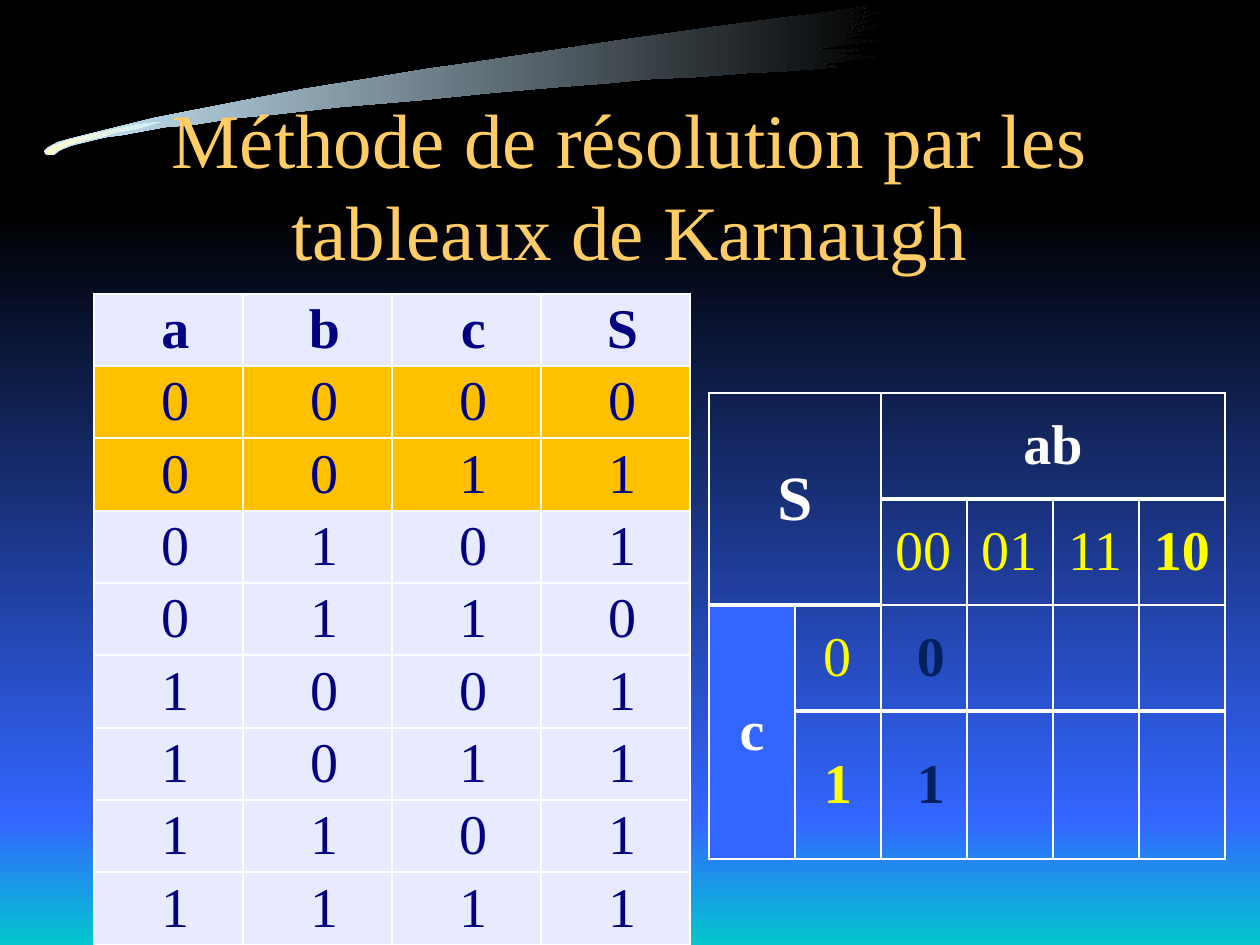
import pptx
import pptx.dml.color
import pptx.enum.shapes
import pptx.enum.text
import pptx.oxml
import pptx.oxml.ns
import pptx.util

PX = 914400 / 126
FONT = "Times New Roman"
WHITE, NAVY, YELLOW, INK = "FFFFFF", "000080", "FFFF00", "002060"
BLUE, LILAC, AMBER = "3366FF", "E8EAFF", "FFC000"

BRUSH = [
    (838, 67), (819, 64), (874, 57), (832, 54), (858, 50), (815, 49), (886, 39),
    (837, 40), (867, 34), (833, 37), (886, 25), (843, 29), (871, 20), (844, 23),
    (883, 11), (848, 15), (869, 6), (845, 10), (815, 14), (774, 19), (707, 28),
    (665, 34), (622, 40), (536, 53), (496, 59), (470, 63), (427, 69), (373, 78),
    (304, 89), (262, 97), (190, 111), (154, 118), (89, 134), (69, 139), (58, 142),
    (48, 147), (45, 150), (44, 151), (45, 154), (48, 155), (54, 155), (59, 151),
    (63, 149), (68, 147), (74, 145), (86, 142), (94, 140), (107, 137), (123, 135),
    (144, 131), (166, 127), (192, 125), (236, 118), (270, 115), (340, 107),
    (422, 100), (490, 93), (558, 87), (610, 83), (651, 79), (697, 77), (748, 73),
    (788, 71),
]
BRUSH_TIP = [
    (45, 150), (49, 149), (53, 146), (57, 145), (66, 141), (81, 137), (108, 131),
    (135, 125), (160, 122), (136, 129), (118, 132), (101, 137), (86, 140),
    (68, 145), (59, 150), (55, 152), (52, 155), (48, 155), (45, 154), (45, 152),
]
TRUTH_ROWS = ["abcS", "0000", "0011", "0101", "0110", "1001", "1011", "1101", "1111"]
KARNAUGH = {
    (0, 0): ("S", 36, WHITE, True),
    (0, 2): ("ab", 32, WHITE, True),
    (1, 2): ("00", 32, YELLOW, False),
    (1, 3): ("01", 32, YELLOW, False),
    (1, 4): ("11", 32, YELLOW, False),
    (1, 5): ("10", 32, YELLOW, True),
    (2, 0): ("c", 32, WHITE, True),
    (2, 1): ("0", 32, YELLOW, False),
    (2, 2): (" 0", 32, INK, True),
    (3, 1): ("1", 32, YELLOW, True),
    (3, 2): (" 1", 32, INK, True),
}
KARNAUGH_MERGES = [((0, 0), (1, 1)), ((0, 2), (0, 5)), ((2, 0), (3, 0))]
THICK_TOPS = {(1, col) for col in range(2, 6)} | {(2, 0), (2, 1)} | {
    (3, col) for col in range(1, 6)}


def px(length):
    """Turn pixels into EMU."""
    return pptx.util.Emu(round(length * PX))


def colour(value):
    """Turn a hex string into a colour."""
    return pptx.dml.color.RGBColor.from_string(value)


def write(frame, text, size=32, ink=WHITE, bold=False, indent=0, before=0):
    """Write one centred paragraph into a text frame."""
    paragraph = frame.paragraphs[0]
    paragraph.alignment = pptx.enum.text.PP_ALIGN.CENTER
    if before:
        paragraph.space_before = pptx.util.Pt(before)
    if indent:
        paragraph._p.get_or_add_pPr().set("marL", str(px(indent)))
    run = paragraph.add_run()
    run.text = text
    run.font.name = FONT
    run.font.size = pptx.util.Pt(size)
    run.font.bold = bold
    run.font.color.rgb = colour(ink)


def shade(shape, start, end, angle):
    """Give a shape a two-colour gradient without line or shadow."""
    shape.shadow.inherit = False
    shape.line.fill.background()
    shape.fill.gradient()
    shape.fill.gradient_angle = angle
    for stop, value in zip(shape.fill.gradient_stops, (start, end)):
        stop.color.rgb = colour(value)


def add_band(slide, top, height, start, end):
    """Add a full-width band shaded from top to bottom."""
    band = slide.shapes.add_shape(
        pptx.enum.shapes.MSO_SHAPE.RECTANGLE, px(-1), px(top), px(1269), px(height))
    shade(band, start, end, 270)


def add_stroke(slide, points, start, end):
    """Add a closed outline shaded from left to right."""
    builder = slide.shapes.build_freeform(*points[0], scale=PX)
    builder.add_line_segments(points[1:], close=True)
    shade(builder.convert_to_shape(), start, end, 0)


def add_title(slide, text):
    """Place the title above the background strokes."""
    title = slide.shapes.title
    title._element.getparent().append(title._element)
    title.left, title.top, title.width, title.height = px(94), px(105), px(1071), px(158)
    title.text_frame.vertical_anchor = pptx.enum.text.MSO_ANCHOR.MIDDLE
    write(title.text_frame, text, size=44, ink="FFCC66")


def add_grid(slide, left, top, widths, heights):
    """Add an unstyled table with the given column widths and row heights."""
    grid = slide.shapes.add_table(
        len(heights), len(widths), px(left), px(top), px(sum(widths)), px(sum(heights))).table
    grid.first_row = grid.horz_banding = False
    for column, width in zip(grid.columns, widths):
        column.width = px(width)
    for row, height in zip(grid.rows, heights):
        row.height = px(height)
    return grid


def format_cell(cell, margin, fill=None, top=1, bottom=1):
    """Set the margins, white borders and fill of a cell."""
    cell.margin_left = cell.margin_right = px(margin)
    cell.margin_top = cell.margin_bottom = 0
    cell.vertical_anchor = pptx.enum.text.MSO_ANCHOR.MIDDLE
    for side, width in zip("LRTB", (1, 1, top, bottom)):
        cell._tc.get_or_add_tcPr().append(pptx.oxml.parse_xml(
            f'<a:ln{side} {pptx.oxml.ns.nsdecls("a")} w="{pptx.util.Pt(width)}">'
            f'<a:solidFill><a:srgbClr val="{WHITE}"/></a:solidFill></a:ln{side}>'))
    if fill:
        cell.fill.solid()
        cell.fill.fore_color.rgb = colour(fill)
    else:
        cell.fill.background()


def add_truth_table(slide):
    """Add the truth table with its first two cases highlighted."""
    heights = [72, 72, 73] * 3
    grid = add_grid(slide, 94, 294, [149] * 4, heights)
    for row, values in enumerate(TRUTH_ROWS):
        for col, value in enumerate(values):
            cell = grid.cell(row, col)
            format_cell(cell, 6, fill=AMBER if row in (1, 2) else LILAC)
            write(cell.text_frame, value, ink=NAVY, bold=row == 0, indent=14, before=2.1)


def add_karnaugh_map(slide):
    """Add the partly filled Karnaugh map."""
    heights = [106, 106, 106, 148]
    grid = add_grid(slide, 709, 393, [86] * 6, heights)
    for first, last in KARNAUGH_MERGES:
        grid.cell(*first).merge(grid.cell(*last))
    for row in range(len(heights)):
        for col in range(6):
            cell = grid.cell(row, col)
            below = (row + cell.span_height, col)
            format_cell(cell, 9, fill=BLUE if col == 0 and row > 1 else None,
                        top=3 if (row, col) in THICK_TOPS else 1,
                        bottom=3 if below in THICK_TOPS else 1)
    for place, (text, size, ink, bold) in KARNAUGH.items():
        write(grid.cell(*place).text_frame, text, size=size, ink=ink, bold=bold)


def main():
    """Build and save the slide."""
    deck = pptx.Presentation()
    deck.slide_width, deck.slide_height = px(1260), px(945)
    slide = deck.slides.add_slide(deck.slide_layouts[5])
    slide.background.fill.solid()
    slide.background.fill.fore_color.rgb = colour("000000")
    add_band(slide, 210, 609, "000000", BLUE)
    add_band(slide, 819, 134, BLUE, "00CCCC")
    add_stroke(slide, BRUSH, "CCECFF", "000000")
    add_stroke(slide, BRUSH_TIP, "FFFFCC", "CCECFF")
    add_title(slide, "Méthode de résolution par les tableaux de Karnaugh")
    add_truth_table(slide)
    add_karnaugh_map(slide)
    deck.save("out.pptx")


if __name__ == "__main__":
    main()
